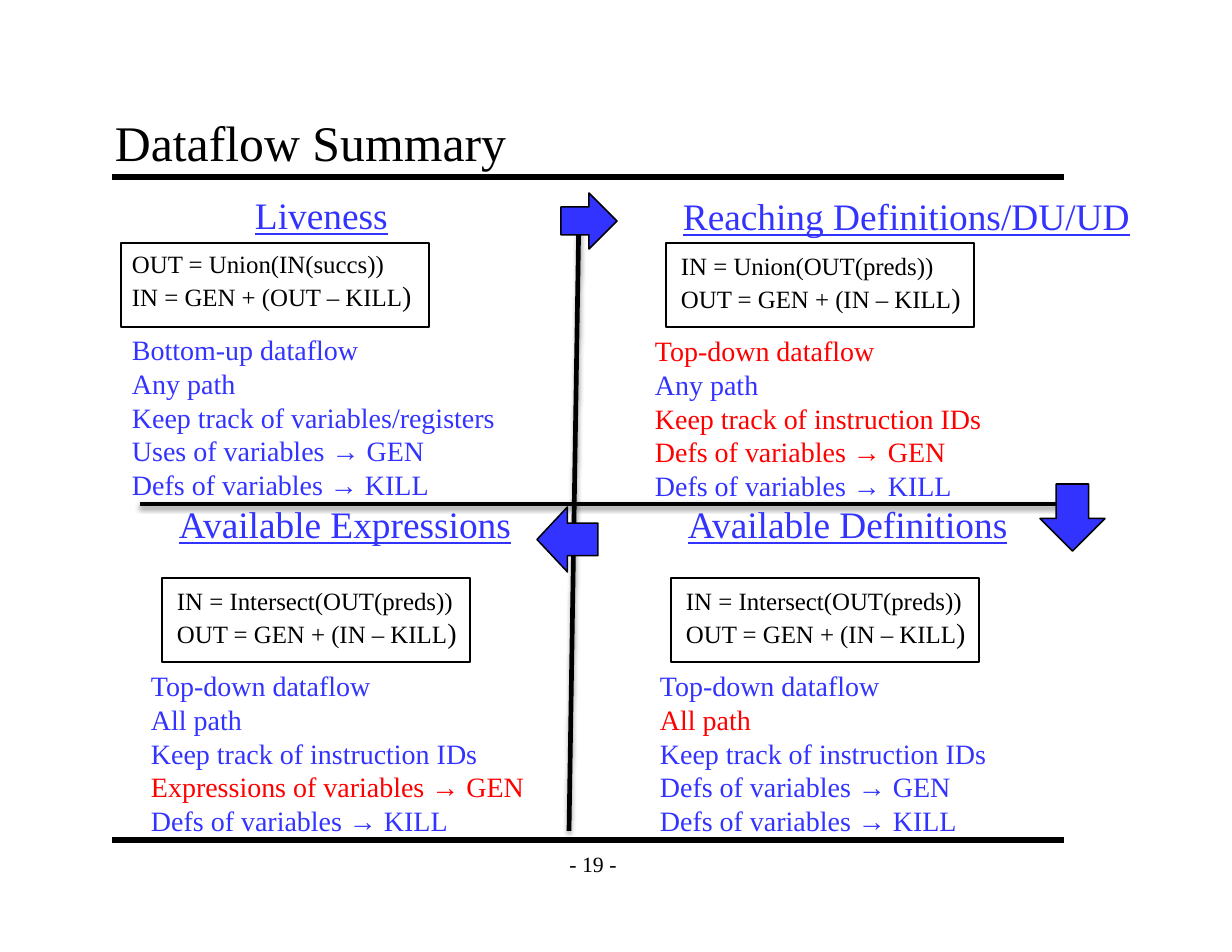
from lxml import etree
from pptx import Presentation
from pptx.dml.color import RGBColor
from pptx.enum.shapes import MSO_CONNECTOR, MSO_SHAPE
from pptx.enum.text import MSO_ANCHOR, PP_ALIGN
from pptx.oxml.ns import qn
from pptx.util import Pt

SCALE = 914400 / 112
FONT = "Times New Roman"
BLACK, BLUE, RED = "000000", "3333FF", "FF0000"
STRAIGHT = MSO_CONNECTOR.STRAIGHT
RECTANGLE = MSO_SHAPE.RECTANGLE
RIGHT, DOWN, LEFT = MSO_SHAPE.RIGHT_ARROW, MSO_SHAPE.DOWN_ARROW, MSO_SHAPE.LEFT_ARROW
TOP, MIDDLE, BOTTOM = MSO_ANCHOR.TOP, MSO_ANCHOR.MIDDLE, MSO_ANCHOR.BOTTOM
ALIGN_LEFT, ALIGN_CENTER = PP_ALIGN.LEFT, PP_ALIGN.CENTER


def px(*lengths):
    return [round(length * SCALE) for length in lengths]


def color(hex_text):
    return RGBColor.from_string(hex_text)


def add_text(slide, box, lines, size=18, fill=BLACK, underline=False,
             anchor=TOP, align=ALIGN_LEFT, inset=(11, 6), wrap=False):
    """Each line is a list of (text, format) runs; format may hold size and fill."""
    text_box = slide.shapes.add_textbox(*px(*box))
    frame = text_box.text_frame
    frame.word_wrap = wrap
    frame.vertical_anchor = anchor
    frame.margin_left = frame.margin_right = px(inset[0])[0]
    frame.margin_top = frame.margin_bottom = px(inset[1])[0]
    for index, line in enumerate(lines):
        paragraph = frame.paragraphs[0] if index == 0 else frame.add_paragraph()
        paragraph.alignment = align
        for text, style in line:
            run = paragraph.add_run()
            run.text = text
            run.font.name = FONT
            run.font.size = Pt(style.get("size", size))
            run.font.underline = underline
            run.font.color.rgb = color(style.get("fill", fill))


def add_line(slide, ends, width, shadow=False):
    line = slide.shapes.add_connector(STRAIGHT, *px(*ends))
    line.line.color.rgb = color(BLACK)
    line.line.width = Pt(width)
    effects = etree.SubElement(line._element.spPr, qn("a:effectLst"))
    if shadow:
        outer = etree.SubElement(effects, qn("a:outerShdw"), blurRad=str(Pt(3.1)),
                                 dist=str(Pt(1.8)), dir="5400000", rotWithShape="0")
        black = etree.SubElement(outer, qn("a:srgbClr"), val=BLACK)
        etree.SubElement(black, qn("a:alpha"), val="35000")


def add_outlined_shape(slide, kind, box, fill=None):
    shape = slide.shapes.add_shape(kind, *px(*box))
    shape.shadow.inherit = False
    if fill:
        shape.fill.solid()
        shape.fill.fore_color.rgb = color(fill)
    else:
        shape.fill.background()
    shape.line.color.rgb = color(BLACK)
    shape.line.width = Pt(1)


def add_frame(slide):
    """Title, page number and the two rules."""
    for y in (177, 840):
        add_line(slide, (112, y, 1064, y), 4)
    add_text(slide, (551, 840, 84, 47), [[("- 19 -", {})]], size=14,
             anchor=MIDDLE, align=ALIGN_CENTER, inset=(12, 7))
    add_text(slide, (103, 103, 952, 75), [[("Dataflow Summary", {})]], size=32,
             anchor=BOTTOM, inset=(12, 7), wrap=True)


def add_analysis(slide, origin, heading, equations, facts, changed=(), widths=(357, 353),
                 heading_at=(6, -83), equations_at=(4, 2), facts_at=(-22, 85)):
    """One quadrant, placed from the corner of its equation box; changed facts are red."""
    def place(offset, width, height):
        return origin[0] + offset[0], origin[1] + offset[1], width, height

    add_text(slide, place(heading_at, widths[0], 57), [[(heading, {})]],
             size=24, fill=BLUE, underline=True)
    add_outlined_shape(slide, RECTANGLE, place((0, 0), 308, 84))
    first, second = equations
    add_text(slide, place(equations_at, 302, 75),
             [[(first, {})], [(second, {}), (")", {"size": 18})]], size=16)
    add_text(slide, place(facts_at, widths[1], 180),
             [[(fact, {"fill": RED if index in changed else BLUE})]
              for index, fact in enumerate(facts)])


def main():
    presentation = Presentation()
    presentation.slide_width, presentation.slide_height = px(1232, 952)
    slide = presentation.slides.add_slide(presentation.slide_layouts[6])
    add_frame(slide)

    # Dividers between the quadrants
    add_line(slide, (140, 504, 1073, 504), 3, shadow=True)
    add_line(slide, (579, 211, 569, 831), 3, shadow=True)

    # Four analyses
    forward = "OUT = GEN + (IN – KILL"
    intersect = ("IN = Intersect(OUT(preds))", forward)
    instructions = "Keep track of instruction IDs"
    defs_gen, defs_kill = "Defs of variables → GEN", "Defs of variables → KILL"
    add_analysis(slide, (121, 243), "Liveness",
                 ("OUT = Union(IN(succs))", "IN = GEN + (OUT – KILL"),
                 ("Bottom-up dataflow", "Any path", "Keep track of variables/registers",
                  "Uses of variables → GEN", defs_kill),
                 widths=(157, 390), heading_at=(123, -57),
                 equations_at=(0, 0), facts_at=(0, 84))
    add_analysis(slide, (666, 243), "Reaching Definitions/DU/UD",
                 ("IN = Union(OUT(preds))", forward),
                 ("Top-down dataflow", "Any path", instructions, defs_gen, defs_kill),
                 changed=(0, 2, 3), widths=(474, 353), heading_at=(6, -56))
    add_analysis(slide, (671, 578), "Available Definitions", intersect,
                 ("Top-down dataflow", "All path", instructions, defs_gen, defs_kill),
                 changed=(1,), widths=(345, 353))
    add_analysis(slide, (162, 578), "Available Expressions", intersect,
                 ("Top-down dataflow", "All path", instructions,
                  "Expressions of variables → GEN", defs_kill),
                 changed=(3,), widths=(357, 399))

    # Arrows leading from one analysis to the next
    for kind, box in ((RIGHT, (561, 193, 56, 56)), (DOWN, (1040, 484, 65, 67)),
                      (LEFT, (537, 507, 61, 65))):
        add_outlined_shape(slide, kind, box, fill=BLUE)

    presentation.save("out.pptx")


if __name__ == "__main__":
    main()
